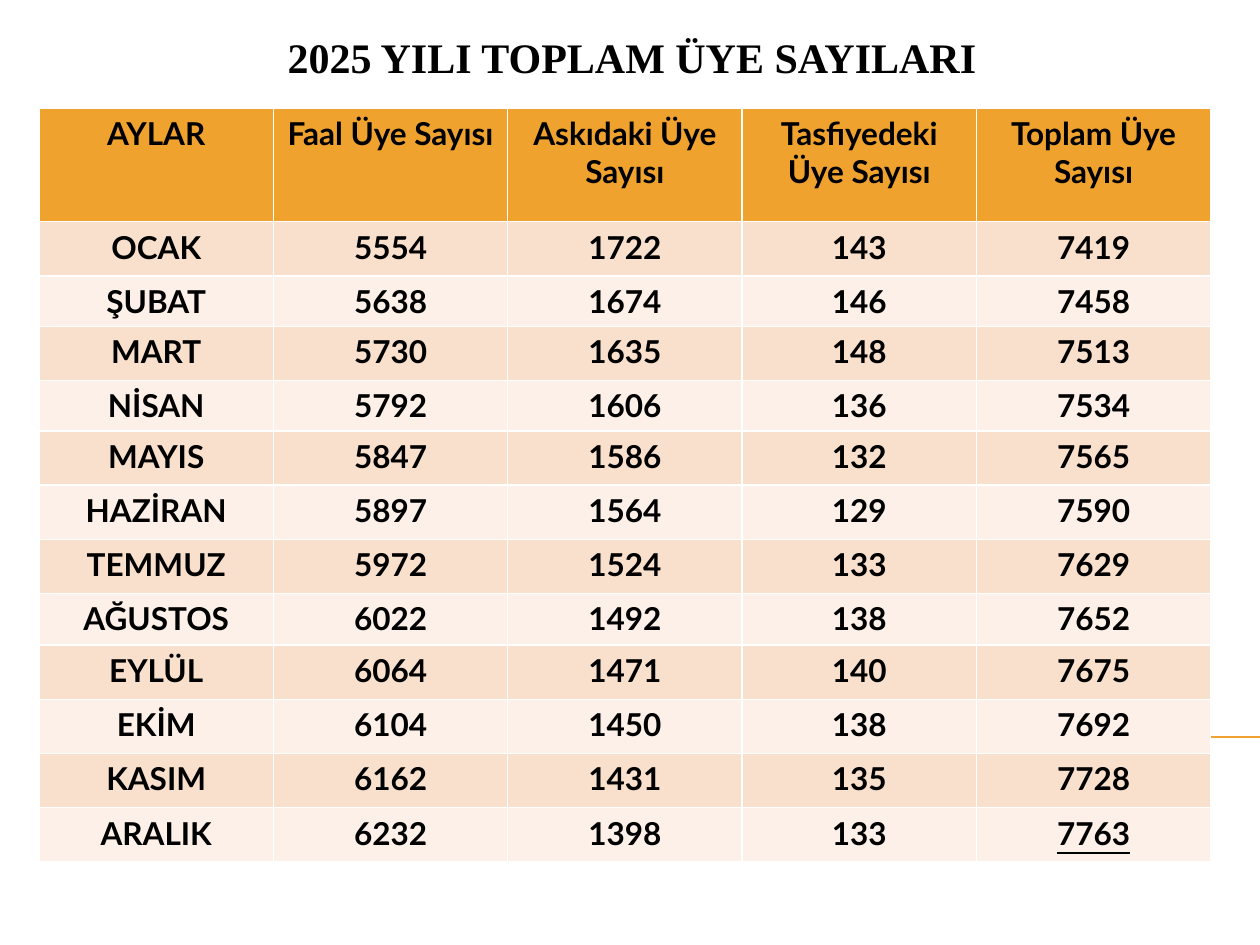
"""Build the slide of monthly member counts for 2025."""
from lxml.etree import SubElement
from pptx import Presentation
from pptx.dml.color import RGBColor as RGB
from pptx.enum.shapes import MSO_CONNECTOR as LINK
from pptx.enum.text import MSO_ANCHOR as ANCHOR, PP_ALIGN as ALIGN
from pptx.oxml.ns import qn
from pptx.util import Inches, Pt

COLORS = {"head": "F0A22E", "odd": "F9E0CD", "even": "FCF0E8", "text": "000000"}
HEADS = ["AYLAR", "Faal Üye Sayısı", "Askıdaki Üye Sayısı",
         "Tasfiyedeki Üye Sayısı", "Toplam Üye Sayısı"]
MONTHS = [
    ("OCAK", 5554, 1722, 143, 7419),
    ("ŞUBAT", 5638, 1674, 146, 7458),
    ("MART", 5730, 1635, 148, 7513),
    ("NİSAN", 5792, 1606, 136, 7534),
    ("MAYIS", 5847, 1586, 132, 7565),
    ("HAZİRAN", 5897, 1564, 129, 7590),
    ("TEMMUZ", 5972, 1524, 133, 7629),
    ("AĞUSTOS", 6022, 1492, 138, 7652),
    ("EYLÜL", 6064, 1471, 140, 7675),
    ("EKİM", 6104, 1450, 138, 7692),
    ("KASIM", 6162, 1431, 135, 7728),
    ("ARALIK", 6232, 1398, 133, 7763),
]
HEIGHTS = {0: 0.9, 2: 0.4, 4: 0.4, 8: 0.41}


def write(frame, text, size=18, face="Lato", line=None):
    para = frame.paragraphs[0]
    para.alignment = ALIGN.CENTER
    run = para.add_run()
    run.text = str(text)
    font = run.font
    font.size, font.name, font.bold, font.underline = Pt(size), face, True, line
    font.color.rgb = RGB.from_string(COLORS["text"])


deck = Presentation()
deck.slide_width, deck.slide_height = Inches(10), Inches(7.5)
slide = deck.slides.add_slide(deck.slide_layouts[5])

rule = slide.shapes.add_connector(
    LINK.STRAIGHT, Inches(0.56), Inches(5.85), Inches(10), Inches(5.85))
rule.line.color.rgb = RGB.from_string(COLORS["head"])
rule.line.width = Pt(0.75)
SubElement(rule._element.spPr, qn("a:effectLst"))

title = slide.shapes.title
title.left, title.top = Inches(0.39), Inches(0.23)
title.width, title.height = Inches(9.25), Inches(0.47)
title.text_frame.vertical_anchor = ANCHOR.BOTTOM
write(title.text_frame, "2025 YILI TOPLAM ÜYE SAYILARI", size=24, face="Times New Roman")

rows = [HEADS, *MONTHS]
table = slide.shapes.add_table(
    len(rows), len(HEADS), Inches(0.31), Inches(0.86), Inches(9.3), Inches(5.95)).table
for r, row in enumerate(rows):
    table.rows[r].height = Inches(HEIGHTS.get(r, 0.43))
    shade = "head" if r == 0 else "odd" if r % 2 else "even"
    for c, value in enumerate(row):
        cell = table.cell(r, c)
        cell.fill.solid()
        cell.fill.fore_color.rgb = RGB.from_string(COLORS[shade])
        last = r == len(MONTHS) and c == len(HEADS) - 1
        write(cell.text_frame, value, line=last or None)

deck.save("out.pptx")
